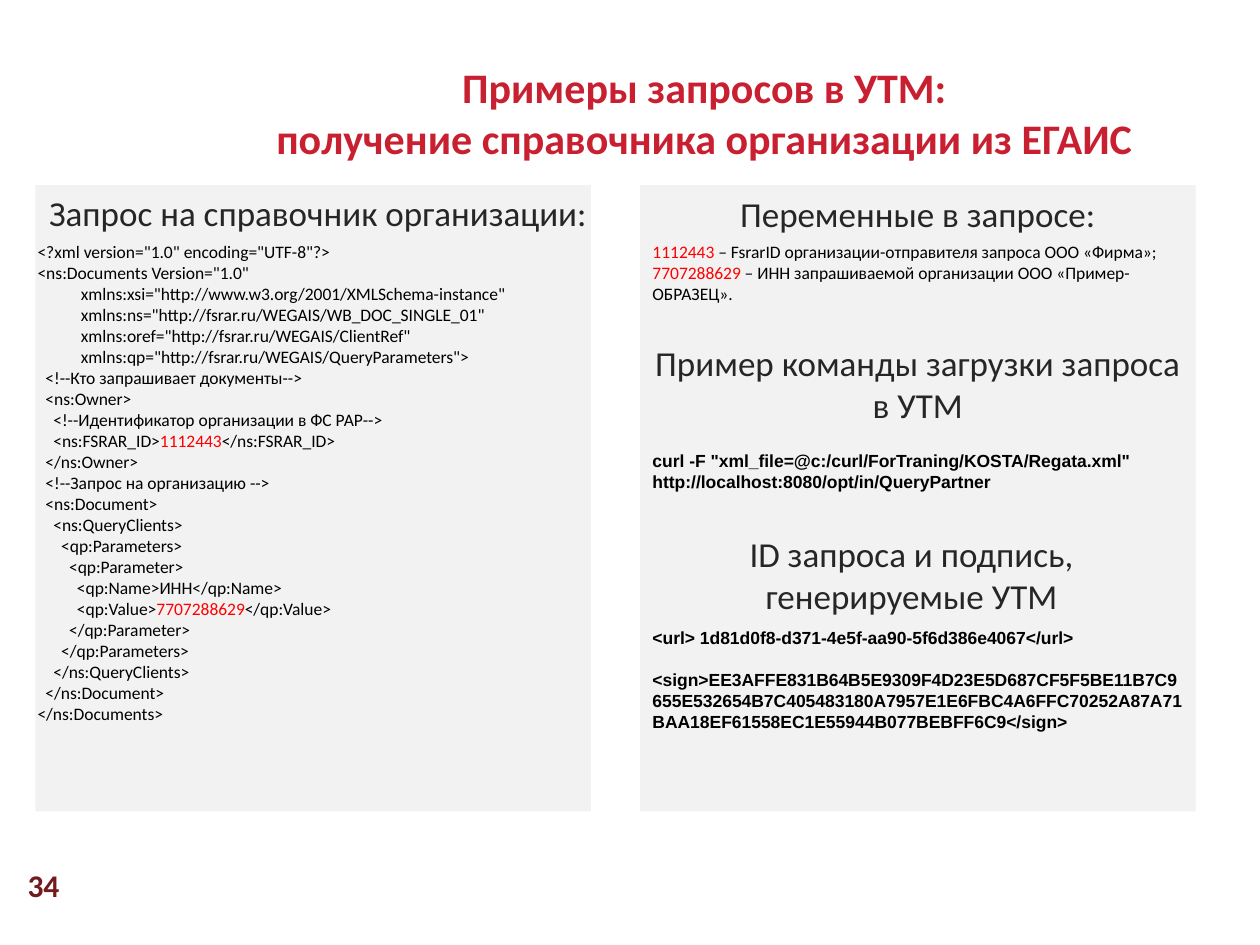
from dataclasses import dataclass

from pptx import Presentation
from pptx.dml.color import RGBColor
from pptx.enum.shapes import MSO_SHAPE
from pptx.enum.text import MSO_ANCHOR, MSO_AUTO_SIZE, PP_ALIGN
from pptx.shapes.autoshape import Shape
from pptx.slide import Slide
from pptx.util import Inches, Pt

RECTANGLE = MSO_SHAPE.RECTANGLE
TOP, MIDDLE = MSO_ANCHOR.TOP, MSO_ANCHOR.MIDDLE
LEFT, CENTER = PP_ALIGN.LEFT, PP_ALIGN.CENTER
FIXED_SIZE = MSO_AUTO_SIZE.NONE

COLUMNS, ROWS = 100, 75
SLIDE_WIDTH, SLIDE_HEIGHT = Inches(10), Inches(7.5)
COLUMN, ROW = SLIDE_WIDTH / COLUMNS, SLIDE_HEIGHT / ROWS

COLORS = {
    "title": "C82031",
    "heading": "262626",
    "body": "000000",
    "variable": "FF0000",
    "panel": "F2F2F2",
    "number": "721A1D",
}
VARIABLES = ("1112443", "7707288629")


@dataclass(frozen=True)
class Area:
    column: float
    row: float
    columns: float
    rows: float


@dataclass(frozen=True)
class Style:
    size: int
    color: str
    font: str = "Calibri"
    bold: bool = False
    align: PP_ALIGN = LEFT
    anchor: MSO_ANCHOR = TOP
    gap: int = 0


@dataclass(frozen=True)
class Block:
    area: Area
    style: Style
    text: str


TITLE = Style(24, "title", bold=True, align=CENTER)
HEADING = Style(20, "heading", align=CENTER)
BODY = Style(10, "body")
COMMAND = Style(10, "body", font="Arial", bold=True, gap=12)
NUMBER = Style(18, "number", bold=True, anchor=MIDDLE)

REQUEST = """<?xml version="1.0" encoding="UTF-8"?>
<ns:Documents Version="1.0"
           xmlns:xsi="http://www.w3.org/2001/XMLSchema-instance"
           xmlns:ns="http://fsrar.ru/WEGAIS/WB_DOC_SINGLE_01"
           xmlns:oref="http://fsrar.ru/WEGAIS/ClientRef"
           xmlns:qp="http://fsrar.ru/WEGAIS/QueryParameters">
  <!--Кто запрашивает документы-->
  <ns:Owner>
    <!--Идентификатор организации в ФС РАР-->
    <ns:FSRAR_ID>1112443</ns:FSRAR_ID>
  </ns:Owner>
  <!--Запрос на организацию -->
  <ns:Document>
    <ns:QueryClients>
      <qp:Parameters>
        <qp:Parameter>
          <qp:Name>ИНН</qp:Name>
          <qp:Value>7707288629</qp:Value>
        </qp:Parameter>
      </qp:Parameters>
    </ns:QueryClients>
  </ns:Document>
</ns:Documents>"""

HEADLINE = Block(
    Area(17.7, 4.4, 76.4, 9.1), TITLE,
    "Примеры запросов в УТМ:\nполучение справочника организации из ЕГАИС",
)
PANELS = [Area(column, 14.7, 44.1, 49.7) for column in (2.8, 50.8)]
BLOCKS = [
    Block(Area(2.8, 14.7, 44.9, 4.4), HEADING, "Запрос на справочник организации:"),
    Block(Area(2, 18.6, 44.1, 44.4), BODY, REQUEST),
    Block(Area(51, 14.8, 43.7, 4.4), HEADING, "Переменные в запросе:"),
    Block(
        Area(50.8, 18.6, 44.1, 6.5), BODY,
        "1112443 – FsrarID организации-отправителя запроса ООО «Фирма»;\n"
        "7707288629 – ИНН запрашиваемой организации ООО «Пример-ОБРАЗЕЦ».",
    ),
    Block(Area(51, 26.6, 43.7, 7.7), HEADING, "Пример команды загрузки запроса в УТМ"),
    Block(
        Area(50.8, 35.2, 44.1, 4.4), COMMAND,
        'curl -F "xml_file=@c:/curl/ForTraning/KOSTA/Regata.xml" '
        "http://localhost:8080/opt/in/QueryPartner",
    ),
    Block(Area(50.5, 41.8, 43.7, 7.7), HEADING, "ID запроса и подпись, генерируемые УТМ"),
    Block(
        Area(50.8, 49.3, 44.1, 9.8), COMMAND,
        "<url> 1d81d0f8-d371-4e5f-aa90-5f6d386e4067</url>\n"
        "<sign>EE3AFFE831B64B5E9309F4D23E5D687CF5F5BE11B7C9"
        "655E532654B7C405483180A7957E1E6FBC4A6FFC70252A87A71"
        "BAA18EF61558EC1E55944B077BEBFF6C9</sign>",
    ),
    Block(Area(1.2, 68.2, 6.2, 4), NUMBER, "34"),
]


def place(shape: Shape, area: Area) -> None:
    shape.left, shape.width = round(area.column * COLUMN), round(area.columns * COLUMN)
    shape.top, shape.height = round(area.row * ROW), round(area.rows * ROW)


def split_variables(line: str) -> list[str]:
    for variable in VARIABLES:
        before, found, after = line.partition(variable)
        if found:
            return [part for part in (before, found, after) if part]
    return [line]


def fill_text(box: Shape, block: Block) -> None:
    style = block.style
    place(box, block.area)
    frame = box.text_frame
    frame.word_wrap = True
    frame.auto_size = FIXED_SIZE
    frame.vertical_anchor = style.anchor
    frame.text = block.text
    for index, para in enumerate(frame.paragraphs):
        para.alignment = style.align
        para.space_before = Pt(style.gap if index else 0)
        parts = split_variables(para.text)
        para.text = parts[0]
        for part in parts[1:]:
            para.add_run().text = part
        for span in para.runs:
            color = "variable" if span.text in VARIABLES else style.color
            span.font.name = style.font
            span.font.size = Pt(style.size)
            span.font.bold = style.bold
            span.font.color.rgb = RGBColor.from_string(COLORS[color])


def add_panel(page: Slide, area: Area) -> None:
    panel = page.shapes.add_shape(RECTANGLE, 0, 0, 0, 0)
    place(panel, area)
    panel.shadow.inherit = False
    panel.fill.solid()
    panel.fill.fore_color.rgb = RGBColor.from_string(COLORS["panel"])
    panel.line.fill.background()


def main() -> None:
    deck = Presentation()
    deck.slide_width, deck.slide_height = SLIDE_WIDTH, SLIDE_HEIGHT
    page = deck.slides.add_slide(deck.slide_layouts.get_by_name("Title Only"))
    fill_text(page.shapes.title, HEADLINE)
    for area in PANELS:
        add_panel(page, area)
    for block in BLOCKS:
        fill_text(page.shapes.add_textbox(0, 0, 0, 0), block)
    deck.save("out.pptx")


if __name__ == "__main__":
    main()
